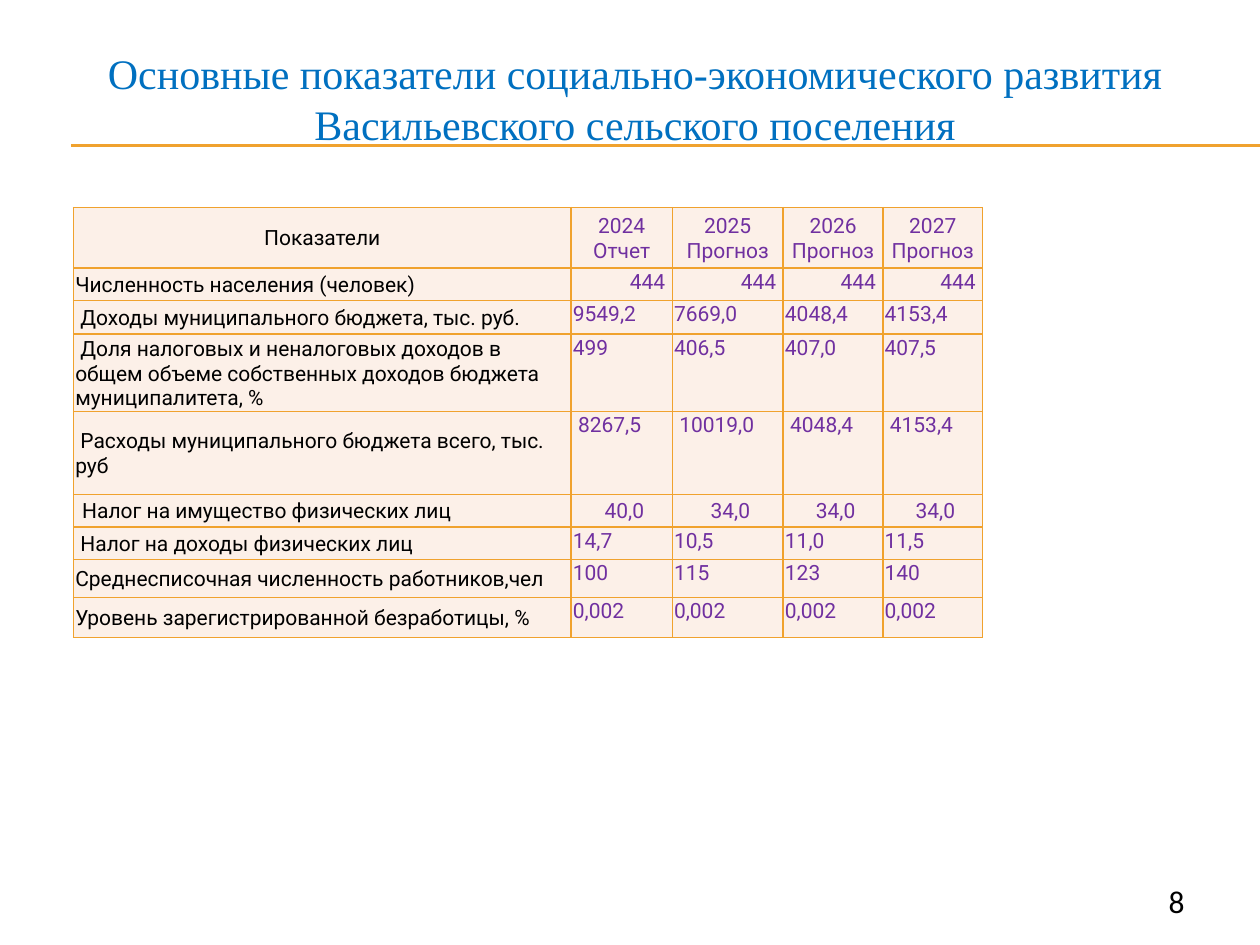
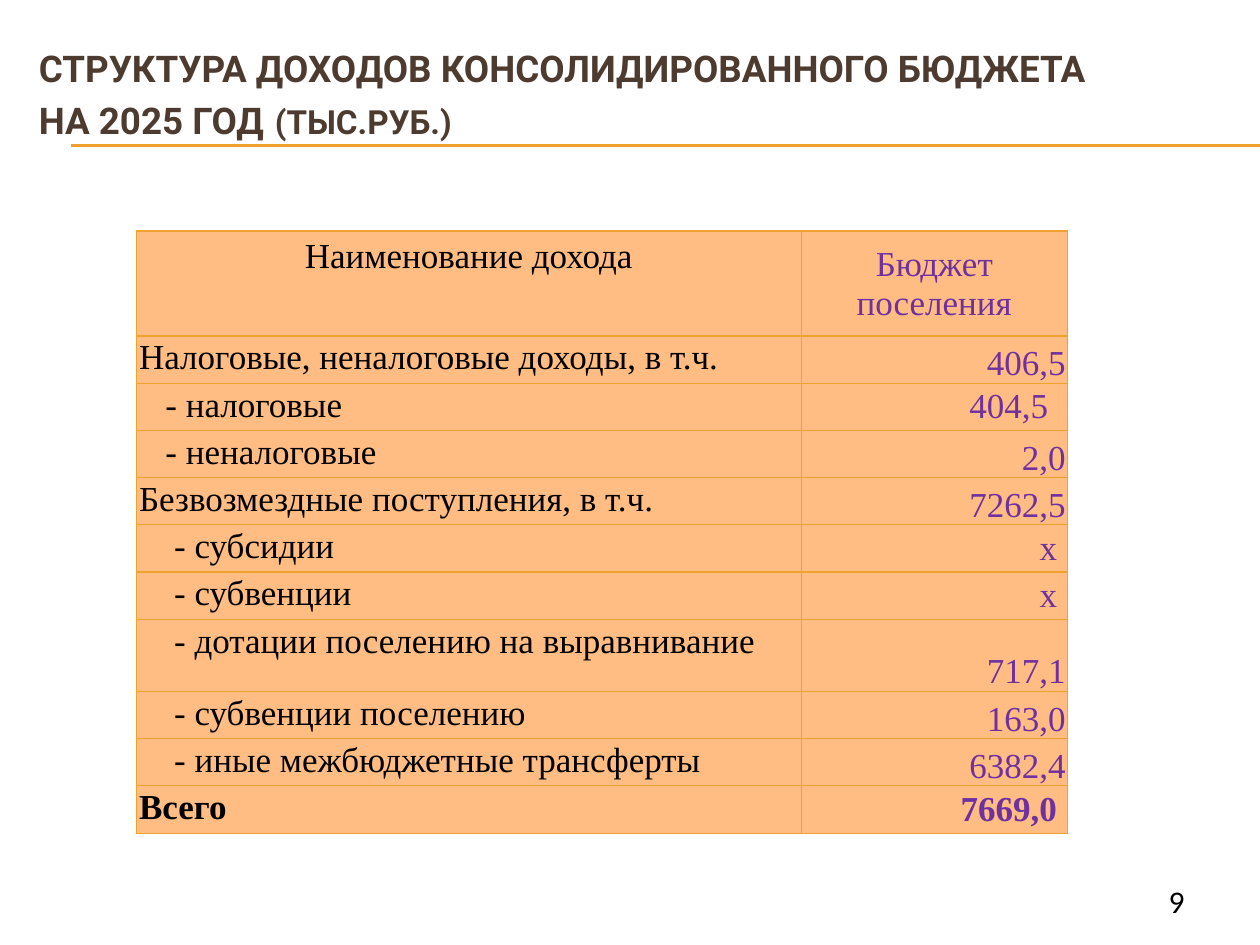
from pptx import Presentation
from pptx.dml.color import RGBColor as Rgb
from pptx.enum.shapes import MSO_CONNECTOR as Conn
from pptx.enum.text import MSO_ANCHOR as Anchor, PP_ALIGN as Align
from pptx.oxml.ns import qn
from pptx.util import Pt
from lxml.etree import SubElement as Sub

COLORS = {
    "rule": "F0A22E", "black": "000000", "value": "7030A0", "blue": "0070C0",
    "brown": "4E3B30", "cream": "FCF0E8", "peach": "FFBD84",
}
SANS, SERIF, PLAIN = "Roboto", "Times New Roman", "Calibri"
LEFT, MID, RIGHT = Align.LEFT, Align.CENTER, Align.RIGHT
TOP, CENTER, LOW = Anchor.TOP, Anchor.MIDDLE, Anchor.BOTTOM

# Cell styles: alignment, anchor, insets (left, top, right, bottom)
THIN = (1, 1, 1, 0)
STYLES = {
    "head": (MID, CENTER, THIN),
    "label": (LEFT, CENTER, THIN),
    "num": (LEFT, TOP, THIN),
    "right": (RIGHT, TOP, (1, 1, 4, 0)),
    "wide": (LEFT, CENTER, (5, 0, 5, 0)),
    "mid": (MID, CENTER, (5, 0, 5, 0)),
    "name": (MID, TOP, (7.2, 3.6, 7.2, 3.6)),
    "item": (LEFT, TOP, (1.5, 1.5, 1.5, 1.5)),
    "sub": (LEFT, TOP, (16.5, 1.5, 1.5, 1.5)),
    "deep": (LEFT, TOP, (21.5, 1.5, 1.5, 1.5)),
    "sum": (RIGHT, LOW, THIN),
    "part": (RIGHT, CENTER, (1.5, 1.5, 11, 1.5)),
    "inset": (RIGHT, CENTER, (1.5, 1.5, 6, 1.5)),
}

# Row: height, label style, label, value style, values
TRENDS = [
    (34.6, "head", "Показатели", "head",
     ["2024 Отчет", "2025\nПрогноз", "2026 Прогноз", "2027 Прогноз"]),
    (18.4, "label", "Численность населения (человек)", "right", ["444"] * 4),
    (19.4, "label", " Доходы муниципального бюджета, тыс. руб.", "num",
     ["9549,2", "7669,0", "4048,4", "4153,4"]),
    (43, "label", " Доля налоговых и неналоговых доходов в общем объеме "
     "собственных доходов бюджета муниципалитета, %", "num",
     ["499", "406,5", "407,0", "407,5"]),
    (47.5, "label", " Расходы муниципального бюджета всего, тыс. руб", "num",
     [" 8267,5", " 10019,0", " 4048,4", " 4153,4"]),
    (18.5, "wide", "Налог на имущество физических лиц", "mid",
     [" 40,0", " 34,0", " 34,0", " 34,0"]),
    (18.5, "label", " Налог на доходы физических лиц", "num",
     ["14,7", "10,5", "11,0", "11,5"]),
    (21.7, "label", "Среднесписочная численность работников,чел", "num",
     ["100", "115", "123", "140"]),
    (23, "label", "Уровень зарегистрированной безработицы, %", "num",
     ["0,002"] * 4),
]
INCOME = [
    (60, "name", "Наименование дохода", "head", ["Бюджет\nпоселения"]),
    (26.8, "item", "Налоговые, неналоговые доходы, в т.ч.", "sum", ["406,5"]),
    (25.2, "sub", "- налоговые", "part", ["404,5"]),
    (25.2, "sub", "- неналоговые", "sum", ["2,0"]),
    (26.8, "item", "Безвозмездные поступления, в т.ч.", "sum", ["7262,5"]),
    (25.2, "deep", "- субсидии", "inset", ["х"]),
    (26.8, "deep", "- субвенции", "inset", ["х"]),
    (41.2, "deep", "- дотации поселению на выравнивание", "sum", ["717,1"]),
    (26.8, "deep", "- субвенции поселению", "sum", ["163,0"]),
    (26.3, "deep", "- иные межбюджетные трансферты", "sum", ["6382,4"]),
    (27.4, "item", "Всего", "inset", ["7669,0"]),
]


def dye(font, name, size, color, bold=False):
    font.name, font.size, font.bold = name, Pt(size), bold
    font.color.rgb = Rgb.from_string(COLORS[color])


def write(frame, text, align, *look):
    """Put text in a frame, one paragraph a line."""
    frame.text = text
    for para in frame.paragraphs:
        para.alignment = align
        dye(para.font, *look)


def add_box(slide, box, anchor):
    frame = slide.shapes.add_textbox(*map(Pt, box)).text_frame
    frame.word_wrap = True
    frame.vertical_anchor = anchor
    return frame


def add_frame(slide, page):
    """Draw the double rule and the page number."""
    for y in (82.8, 83.5):
        rule = slide.shapes.add_connector(
            Conn.STRAIGHT, Pt(40.5), Pt(y), Pt(720), Pt(y))
        rule.line.color.rgb = Rgb.from_string(COLORS["rule"])
        rule.line.width = Pt(0.75)
        Sub(rule._element.spPr, qn("a:effectLst"))
    frame = add_box(slide, (516, 500.4, 168, 28.8), CENTER)
    write(frame, str(page), RIGHT, PLAIN, 18, "black")


def edge(cell, width):
    """Line all four sides of a cell; call before setting its fill."""
    props = cell._tc.get_or_add_tcPr()
    for side in "LRTB":
        line = Sub(props, qn(f"a:ln{side}"), w=str(Pt(width)))
        paint = Sub(line, qn("a:solidFill"))
        Sub(paint, qn("a:srgbClr"), val=COLORS["rule"])


def set_cell(cell, text, style, fill, width, *look):
    align, anchor, (left, top, right, low) = STYLES[style]
    edge(cell, width)
    cell.fill.solid()
    cell.fill.fore_color.rgb = Rgb.from_string(COLORS[fill])
    cell.vertical_anchor = anchor
    cell.margin_left, cell.margin_top = Pt(left), Pt(top)
    cell.margin_right, cell.margin_bottom = Pt(right), Pt(low)
    write(cell.text_frame, text, align, *look)


def add_grid(slide, left, top, cols, rows, fill, width, font, size, total=False):
    """Build a table of labels and values; total makes the last row bold."""
    high = sum(row[0] for row in rows)
    table = slide.shapes.add_table(
        len(rows), len(cols), Pt(left), Pt(top), Pt(sum(cols)), Pt(high)).table
    table.first_row = table.horz_banding = False
    for col, wide in zip(table.columns, cols):
        col.width = Pt(wide)
    for i, (tall, kind, label, style, values) in enumerate(rows):
        table.rows[i].height = Pt(tall)
        bold = total and i == len(rows) - 1
        set_cell(table.cell(i, 0), label, kind, fill, width,
                 font, size, "black", bold)
        for j, value in enumerate(values, 1):
            set_cell(table.cell(i, j), value, style, fill, width,
                     font, size, "value", bold)


def add_trends(slide):
    add_frame(slide, 8)
    add_grid(slide, 42, 118.6, (284.4, 57.8, 63.4, 57, 57), TRENDS,
             "cream", 1, SANS, 12)
    frame = add_box(slide, (41.8, 23.8, 642.2, 65.5), TOP)
    write(frame, "Основные показатели социально-экономического развития "
          "Васильевского сельского поселения", MID, SERIF, 24, "blue")


def add_income(slide):
    add_frame(slide, 9)
    para = add_box(slide, (15.1, 18, 631.4, 72), CENTER).paragraphs[0]
    for text, size in (("СТРУКТУРА ДОХОДОВ КОНСОЛИДИРОВАННОГО БЮДЖЕТА", 21),
                       ("\v", 25), ("НА 2025 ГОД", 21), (" ", 25),
                       ("(ТЫС.РУБ.)", 19)):
        if text == "\v":
            para.add_line_break()
            continue
        run = para.add_run()
        run.text = text
        dye(run.font, SANS, size, "brown", True)
    add_grid(slide, 78, 132, (379.8, 152.2), INCOME,
             "peach", 0.79, SERIF, 20, total=True)


def main():
    deck = Presentation()
    deck.slide_width, deck.slide_height = Pt(720), Pt(540)
    for build in (add_trends, add_income):
        build(deck.slides.add_slide(deck.slide_layouts[6]))
    deck.save("out.pptx")


if __name__ == "__main__":
    main()
